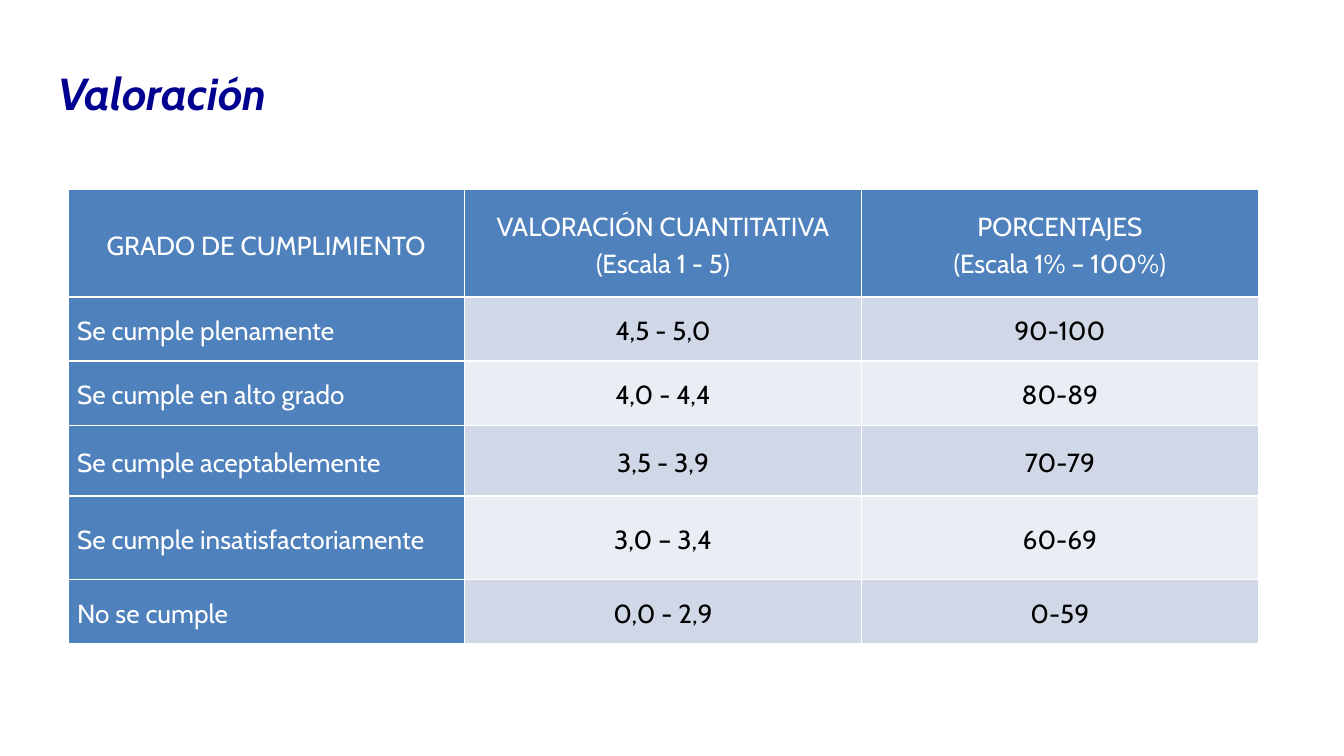
from lxml import etree
from pptx import Presentation
from pptx import util as u
from pptx.dml.color import RGBColor
from pptx.enum import text
from pptx.oxml.ns import qn

COLORS = {
    "title": "000090",
    "header": "4F81BD",
    "dark_band": "D0D8E8",
    "light_band": "E9EDF4",
    "white": "FFFFFF",
    "black": "000000",
}
HEADINGS = [
    "GRADO DE CUMPLIMIENTO",
    "VALORACIÓN CUANTITATIVA\n(Escala 1 - 5)",
    "PORCENTAJES\n(Escala 1% – 100%)",
]
GRADES = [
    ["Se cumple plenamente", "4,5 - 5,0", "90-100"],
    ["Se cumple en alto grado", "4,0 - 4,4", "80-89"],
    ["Se cumple aceptablemente", "3,5 - 3,9", "70-79"],
    ["Se cumple insatisfactoriamente", "3,0 – 3,4", "60-69"],
    ["No se cumple", "0,0 - 2,9", "0-59"],
]
ROW_HEIGHTS = [57.5, 34.4, 34.4, 38, 44.6, 34.4]
COLUMN_WIDTH = 212.6


def write(frame, content, *, size, color, font="Cabin", bold=False, italic=False,
          align=text.PP_ALIGN.LEFT, spacing=1.0):
    """Fill a text frame with one paragraph per line of content."""
    frame.word_wrap = True
    frame.text = content
    for line in frame.paragraphs:
        line.alignment = align
        line.line_spacing = spacing
        for run in line.runs:
            run.font.name = font
            run.font.size = u.Pt(size)
            run.font.bold = bold
            run.font.italic = italic
            run.font.color.rgb = RGBColor.from_string(COLORS[color])


class Deck:
    """Hold the presentation style and the current slide."""

    def __init__(self, width, height):
        self.show = Presentation()
        self.show.slide_width, self.show.slide_height = u.Pt(width), u.Pt(height)
        self.slide = self.show.slides.add_slide(self.show.slide_layouts[6])

    def title(self, content, left, top, width, height):
        """Add the slide heading."""
        heading = self.slide.shapes.add_textbox(*map(u.Pt, (left, top, width, height)))
        heading.text_frame.vertical_anchor = text.MSO_ANCHOR.MIDDLE
        write(heading.text_frame, content, size=24, color="title", bold=True, italic=True)

    def border(self, cell, width=1):
        """Draw a white line on each side of a cell."""
        properties = cell._tc.get_or_add_tcPr()
        for side in ("lnL", "lnR", "lnT", "lnB"):
            line = etree.SubElement(properties, qn(f"a:{side}"), w=str(u.Pt(width)))
            solid = etree.SubElement(line, qn("a:solidFill"))
            etree.SubElement(solid, qn("a:srgbClr"), val=COLORS["white"])

    def cell(self, cell, content, fill, color, align):
        """Format and fill one table cell."""
        cell.margin_left = cell.margin_right = u.Pt(5)
        cell.margin_top = cell.margin_bottom = u.Pt(0)
        cell.vertical_anchor = text.MSO_ANCHOR.MIDDLE
        self.border(cell)
        cell.fill.solid()
        cell.fill.fore_color.rgb = RGBColor.from_string(COLORS[fill])
        write(cell.text_frame, content, size=14, color=color, align=align, spacing=1.15)

    def table(self, rows, left, top, column_width, heights):
        """Add a banded table with a header row and a header column."""
        columns = len(rows[0])
        table = self.slide.shapes.add_table(
            len(rows), columns, u.Pt(left), u.Pt(top),
            u.Pt(column_width * columns), u.Pt(sum(heights))).table
        table.first_col = True
        for column in table.columns:
            column.width = u.Pt(column_width)
        for r, (row, height) in enumerate(zip(rows, heights)):
            table.rows[r].height = u.Pt(height)
            band = "dark_band" if r % 2 else "light_band"
            for c, content in enumerate(row):
                is_header = r == 0 or c == 0
                is_label = r > 0 and c == 0
                self.cell(table.cell(r, c), content,
                          fill="header" if is_header else band,
                          color="white" if is_header else "black",
                          align=text.PP_ALIGN.LEFT if is_label else text.PP_ALIGN.CENTER)


def main():
    deck = Deck(720, 405)
    deck.title("Valoración", 24, 23, 375, 53.5)
    deck.table([HEADINGS, *GRADES], 36.3, 101.6, COLUMN_WIDTH, ROW_HEIGHTS)
    deck.show.save("out.pptx")


if __name__ == "__main__":
    main()
